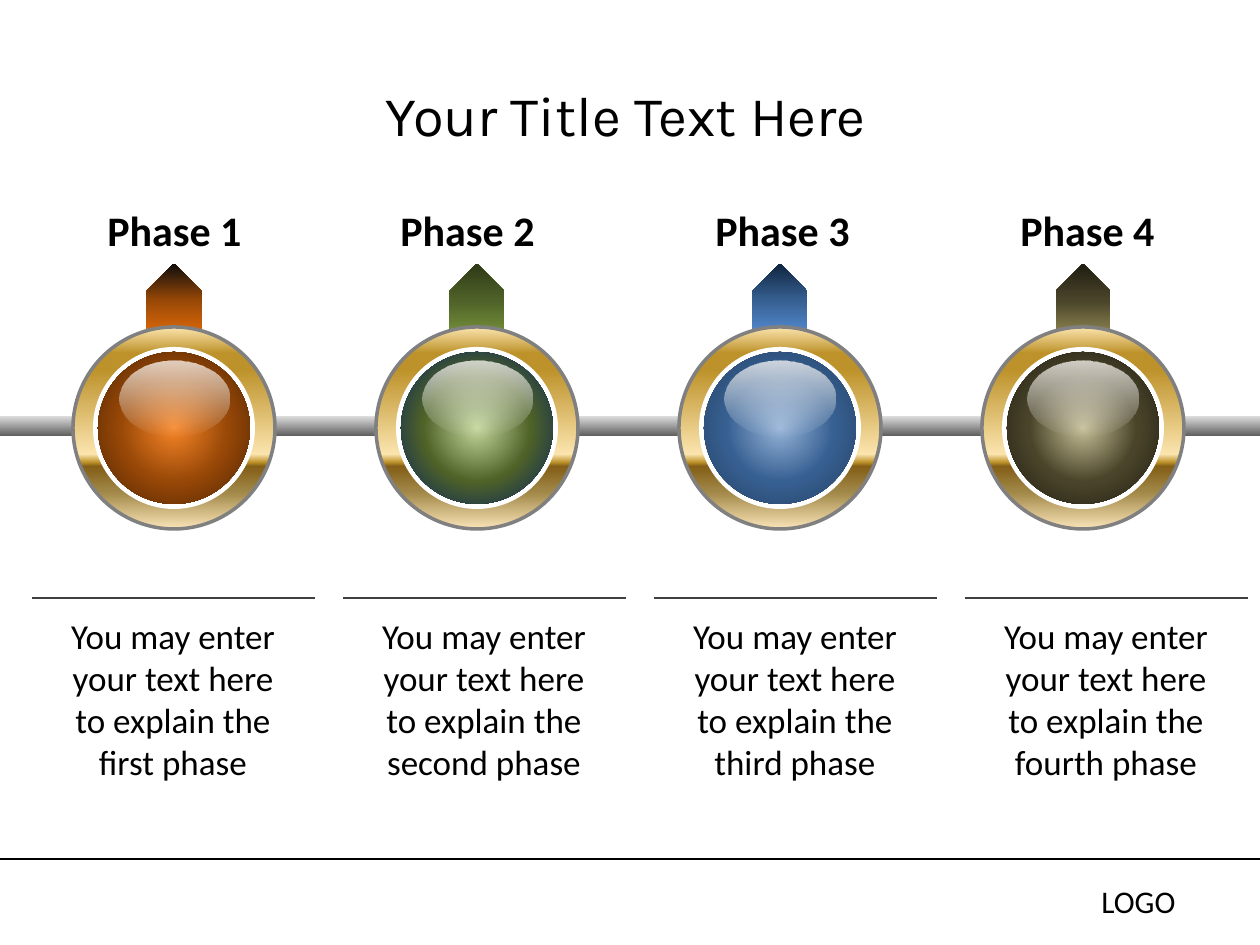
from pptx import Presentation
from pptx.dml.color import RGBColor
from pptx.enum.shapes import MSO_CONNECTOR, MSO_SHAPE
from pptx.enum.text import MSO_ANCHOR, PP_ALIGN
from pptx.oxml import parse_xml
from pptx.oxml.ns import nsdecls, qn
from pptx.oxml.xmlchemy import OxmlElement
from pptx.util import Emu, Pt

EMU_PER_PX = 914400 / 126
GOLD = [(0, "FBE4AE"), (13, "BD922A"), (21, "BD922A"), (63, "FBE4AE"),
        (67, "BD922A"), (69, "835E17"), (82, "A28949"), (100, "FAE3B7")]
LINEAR = '<a:lin ang="{}" scaled="0"/>'
RADIAL = ('<a:path path="circle"><a:fillToRect l="50000" t="50000" '
          'r="50000" b="50000"/></a:path>')
DOWN = LINEAR.format(5400000)
ALONG = LINEAR.format(0)

PHASES = [
    ("Phase 1", 95, "first", ("E46C0A", "984807", "0D0D0D"), ("F68528", "984807", "4C2403")),
    ("Phase 2", 388, "second", ("77933C", "4F6228", "2E3917"), ("C3D69B", "4F6228", "002060")),
    ("Phase 3", 703, "third", ("558ED5", "376092", "0F243E"), ("95B3D7", "376092", "254061")),
    ("Phase 4", 1008, "fourth", ("948A54", "4A452A", "1E1C11"), ("C4BD97", "4A452A", "1E1C11")),
]


def px(*lengths):
    """Turn pixel lengths into EMU."""
    return [Emu(round(length * EMU_PER_PX)) for length in lengths]


def color(hex_value):
    """Turn a hex string into a colour."""
    return RGBColor.from_string(hex_value)


def three_stops(colors):
    """Spread three colours evenly over a gradient."""
    return list(zip((0, 50, 100), colors))


def add_solid(slide, kind, box, fill):
    """Add a borderless preset shape with a plain fill."""
    shape = slide.shapes.add_shape(kind, *px(*box))
    shape.shadow.inherit = False
    shape.fill.solid()
    shape.fill.fore_color.rgb = color(fill)
    shape.line.fill.background()
    return shape


def add_gradient(slide, kind, box, stops, direction):
    """Add a preset shape whose stops are (position, colour[, opacity])."""
    shape = add_solid(slide, kind, box, stops[0][1])
    stop_xml = "".join(
        f'<a:gs pos="{position * 1000}"><a:srgbClr val="{value}">'
        + "".join(f'<a:alpha val="{alpha * 1000}"/>' for alpha in opacity)
        + "</a:srgbClr></a:gs>"
        for position, value, *opacity in stops)
    properties = shape._element.spPr
    properties.replace(properties.find(qn("a:solidFill")), parse_xml(
        f'<a:gradFill {nsdecls("a")} rotWithShape="1">'
        f"<a:gsLst>{stop_xml}</a:gsLst>{direction}</a:gradFill>"))
    return shape


def add_rule(slide, left, top, width, line_color):
    """Add a thin horizontal line."""
    rule = slide.shapes.add_connector(
        MSO_CONNECTOR.STRAIGHT, *px(left, top, left + width, top))
    rule.line.color.rgb = color(line_color)
    rule.line.width = Pt(0.75)
    rule._element.spPr.append(OxmlElement("a:effectLst"))


def add_text(slide, box, text, size, font="Calibri", bold=False,
             align=PP_ALIGN.LEFT, anchor=MSO_ANCHOR.TOP, wrap=True):
    """Add a text box holding one formatted paragraph."""
    frame = slide.shapes.add_textbox(*px(*box)).text_frame
    frame.word_wrap = wrap
    frame.vertical_anchor = anchor
    frame.text = text
    paragraph = frame.paragraphs[0]
    paragraph.alignment = align
    run_font = paragraph.runs[0].font
    run_font.name, run_font.size, run_font.bold = font, Pt(size), bold
    run_font.color.rgb = color("000000")


def add_medallion(slide, left, top, size, arrow_colors, ball_colors):
    """Draw an upward arrow behind a gold ring with a glossy ball."""
    def inset(margin):
        return left + margin, top + margin, size - 2 * margin, size - 2 * margin

    arrow = add_gradient(slide, MSO_SHAPE.PENTAGON,
                         (left + (size - 74) / 2, top - 54, 74, 55),
                         three_stops(arrow_colors), ALONG)
    arrow.rotation = 270
    ring = add_gradient(slide, MSO_SHAPE.OVAL, inset(0), GOLD, DOWN)
    ring.line.color.rgb = color("808080")
    ring.line.width = Pt(2)
    add_solid(slide, MSO_SHAPE.OVAL, inset(20), "FFFFFF")
    add_gradient(slide, MSO_SHAPE.OVAL, inset(25), three_stops(ball_colors), RADIAL)
    add_gradient(slide, MSO_SHAPE.OVAL, (left + (size - 110) / 2, top + 34, 110, 76),
                 [(0, "FFFCF9", 77), (100, "FFFFFF", 0)], DOWN)


def add_explanation(slide, left, top, width, ordinal):
    """Draw a rule with the phase description below it."""
    add_rule(slide, left, top, width, "404040")
    add_text(slide, (left + 10, top + 10, width - 21, 183),
             f"You may enter your text here to explain the {ordinal} phase",
             20, align=PP_ALIGN.CENTER)


def add_footer(slide, top, width):
    """Draw the footer rule and its label."""
    add_rule(slide, 0, top, width, "000000")
    add_text(slide, (1089, top + 17, 140, 50), "LOGO", 18)


def main():
    """Build the slide and save it."""
    presentation = Presentation()
    presentation.slide_width, presentation.slide_height = px(1260, 945)
    slide = presentation.slides.add_slide(presentation.slide_layouts[6])
    add_footer(slide, 859, 1260)
    add_gradient(slide, MSO_SHAPE.RECTANGLE, (0, 416, 1260, 20),
                 [(0, "DEDEDE"), (100, "5F5F5F")], DOWN)
    for index, (name, name_left, ordinal, arrow, ball) in enumerate(PHASES):
        add_medallion(slide, 73 + 303 * index, 327, 202, arrow, ball)
        add_text(slide, (name_left, 198, 161, 63), name, 24, bold=True, wrap=False)
        add_explanation(slide, 32 + 311 * index, 598, 283, ordinal)
    add_text(slide, (59, 59, 1134, 110), "Your Title Text Here", 32, font="Karla",
             align=PP_ALIGN.CENTER, anchor=MSO_ANCHOR.MIDDLE)
    presentation.save("out.pptx")


if __name__ == "__main__":
    main()
